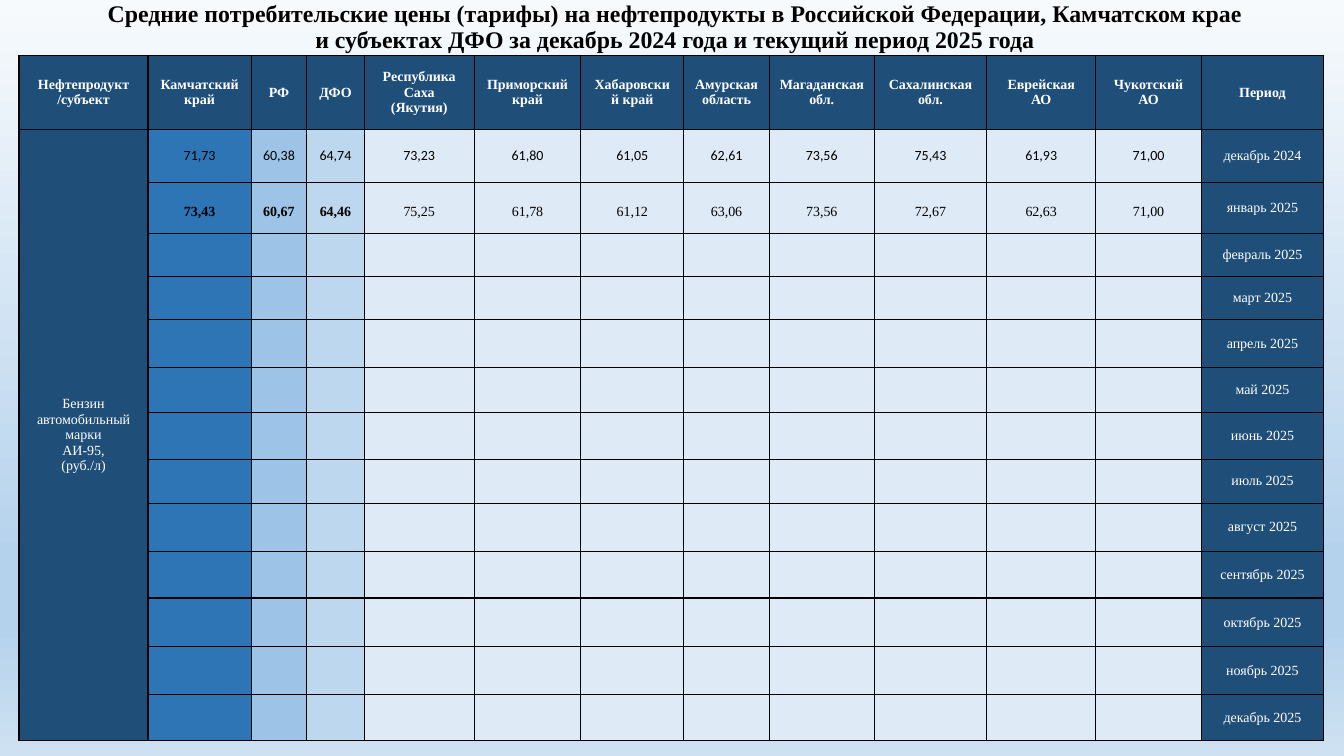
import dataclasses

import lxml.etree
import pptx
import pptx.dml.color
import pptx.enum.text
import pptx.oxml.ns
import pptx.table
import pptx.text.text
import pptx.util
from pptx.util import Cm


@dataclasses.dataclass(frozen=True)
class Theme:
    serif: str = "Times New Roman"
    sans: str = "Calibri"
    title_size: float = 17
    table_size: float = 10
    border_width: float = 1
    black: str = "000000"
    white: str = "FFFFFF"
    header: str = "1F4E79"
    neutral: str = "DEEBF7"
    background: tuple[tuple[int, str], ...] = (
        (0, "F7FAFD"), (74, "B5D2EC"), (83, "B5D2EC"), (100, "CEE1F2"))


@dataclasses.dataclass(frozen=True)
class Region:
    name: str
    width: float
    december: str
    january: str
    fill: str
    highlighted: bool = False


@dataclasses.dataclass(frozen=True)
class Period:
    name: str
    height: float


THEME = Theme()
TITLE = ("Средние потребительские цены (тарифы) на нефтепродукты в Российской "
         "Федерации, Камчатском крае и субъектах ДФО за декабрь 2024 года "
         "и текущий период 2025 года")
PRODUCT = "Бензин автомобильный марки\nАИ-95,\n(руб./л)"
PRODUCT_WIDTH = 3.25
PERIOD_WIDTH = 3.07
HEADER_HEIGHT = 1.86
REGIONS = [
    Region("Камчатский край", 2.6, "71,73", "73,43", "2E75B6", True),
    Region("РФ", 1.4, "60,38", "60,67", "9DC3E6", True),
    Region("ДФО", 1.45, "64,74", "64,46", "BDD7EE", True),
    Region("Республика Саха (Якутия)", 2.77, "73,23", "75,25", THEME.neutral),
    Region("Приморский край", 2.69, "61,80", "61,78", THEME.neutral),
    Region("Хабаровский край", 2.59, "61,05", "61,12", THEME.neutral),
    Region("Амурская область", 2.16, "62,61", "63,06", THEME.neutral),
    Region("Магаданская обл.", 2.64, "73,56", "73,56", THEME.neutral),
    Region("Сахалинская обл.", 2.84, "75,43", "72,67", THEME.neutral),
    Region("Еврейская АО", 2.74, "61,93", "62,63", THEME.neutral),
    Region("Чукотский АО", 2.67, "71,00", "71,00", THEME.neutral),
]
PERIODS = [
    Period("декабрь 2024", 1.34),
    Period("январь 2025", 1.29),
    Period("февраль 2025", 1.08),
    Period("март 2025", 1.08),
    Period("апрель 2025", 1.21),
    Period("май 2025", 1.13),
    Period("июнь 2025", 1.18),
    Period("июль 2025", 1.11),
    Period("август 2025", 1.21),
    Period("сентябрь 2025", 1.18),
    Period("октябрь 2025", 1.23),
    Period("ноябрь 2025", 1.21),
    Period("декабрь 2025", 1.16),
]


def write_text(frame: pptx.text.text.TextFrame, text: str, *,
               font: str = THEME.serif, size: float = THEME.table_size,
               color: str = THEME.black, bold: bool = False,
               spacing: float = 1.0) -> None:
    frame.text = text
    for paragraph in frame.paragraphs:
        paragraph.alignment = pptx.enum.text.PP_ALIGN.CENTER
        paragraph.line_spacing = spacing
        for run in paragraph.runs:
            run.font.name = font
            run.font.size = pptx.util.Pt(size)
            run.font.bold = bold
            run.font.color.rgb = pptx.dml.color.RGBColor.from_string(color)


def add_element(parent: lxml.etree._Element, tag: str,
                **attributes: str) -> lxml.etree._Element:
    return lxml.etree.SubElement(parent, pptx.oxml.ns.qn(tag), attributes)


def format_cell(cell: pptx.table._Cell, fill: str) -> None:
    cell.vertical_anchor = pptx.enum.text.MSO_ANCHOR.MIDDLE
    properties = cell._tc.get_or_add_tcPr()
    for side in ("L", "R", "T", "B"):
        border = add_element(properties, f"a:ln{side}",
                             w=str(pptx.util.Pt(THEME.border_width)))
        solid = add_element(border, "a:solidFill")
        add_element(solid, "a:srgbClr", val=THEME.black)
    cell.fill.solid()
    cell.fill.fore_color.rgb = pptx.dml.color.RGBColor.from_string(fill)


def paint_background(slide: pptx.slide.Slide) -> None:
    fill = slide.background.fill
    fill.gradient()
    fill.gradient_angle = 270
    stops = next(slide.element.iter(pptx.oxml.ns.qn("a:gsLst")))
    for stop in list(stops):
        stops.remove(stop)
    for percent, color in THEME.background:
        stop = add_element(stops, "a:gs", pos=str(percent * 1000))
        add_element(stop, "a:srgbClr", val=color)


def add_title(slide: pptx.slide.Slide) -> None:
    title = slide.shapes.title
    title.left, title.top = Cm(2.34), Cm(0)
    title.width, title.height = Cm(29.34), Cm(1.4)
    frame = title.text_frame
    frame.word_wrap = True
    frame.auto_size = pptx.enum.text.MSO_AUTO_SIZE.NONE
    frame.vertical_anchor = pptx.enum.text.MSO_ANCHOR.MIDDLE
    write_text(frame, TITLE, size=THEME.title_size, bold=True, spacing=0.9)


def add_price_table(slide: pptx.slide.Slide) -> None:
    widths = [PRODUCT_WIDTH, *(region.width for region in REGIONS), PERIOD_WIDTH]
    heights = [HEADER_HEIGHT, *(period.height for period in PERIODS)]
    table = slide.shapes.add_table(
        len(heights), len(widths), Cm(0.48), Cm(1.4),
        Cm(sum(widths)), Cm(sum(heights))).table
    table.horz_banding = False
    for column, width in zip(table.columns, widths):
        column.width = Cm(width)
    for row, height in zip(table.rows, heights):
        row.height = Cm(height)

    fills = [THEME.header, *(region.fill for region in REGIONS), THEME.header]
    for row_index, row in enumerate(table.rows):
        for cell, fill in zip(row.cells, fills):
            format_cell(cell, fill if row_index else THEME.header)

    headings = ["Нефтепродукт\n/субъект", *(region.name for region in REGIONS),
                "Период"]
    for cell, heading in zip(table.rows[0].cells, headings):
        write_text(cell.text_frame, heading, color=THEME.white, bold=True)

    product = table.cell(1, 0)
    product.merge(table.cell(len(PERIODS), 0))
    write_text(product.text_frame, PRODUCT, color=THEME.white)

    for column_index, region in enumerate(REGIONS, start=1):
        write_text(table.cell(1, column_index).text_frame, region.december,
                   font=THEME.sans)
        write_text(table.cell(2, column_index).text_frame, region.january,
                   bold=region.highlighted, spacing=1.5)
    for row_index, period in enumerate(PERIODS, start=1):
        write_text(table.cell(row_index, len(widths) - 1).text_frame,
                   period.name, color=THEME.white)


def main() -> None:
    presentation = pptx.Presentation()
    presentation.slide_width, presentation.slide_height = Cm(33.87), Cm(19.05)
    slide = presentation.slides.add_slide(presentation.slide_layouts[5])
    paint_background(slide)
    add_title(slide)
    add_price_table(slide)
    presentation.save("out.pptx")


if __name__ == "__main__":
    main()
